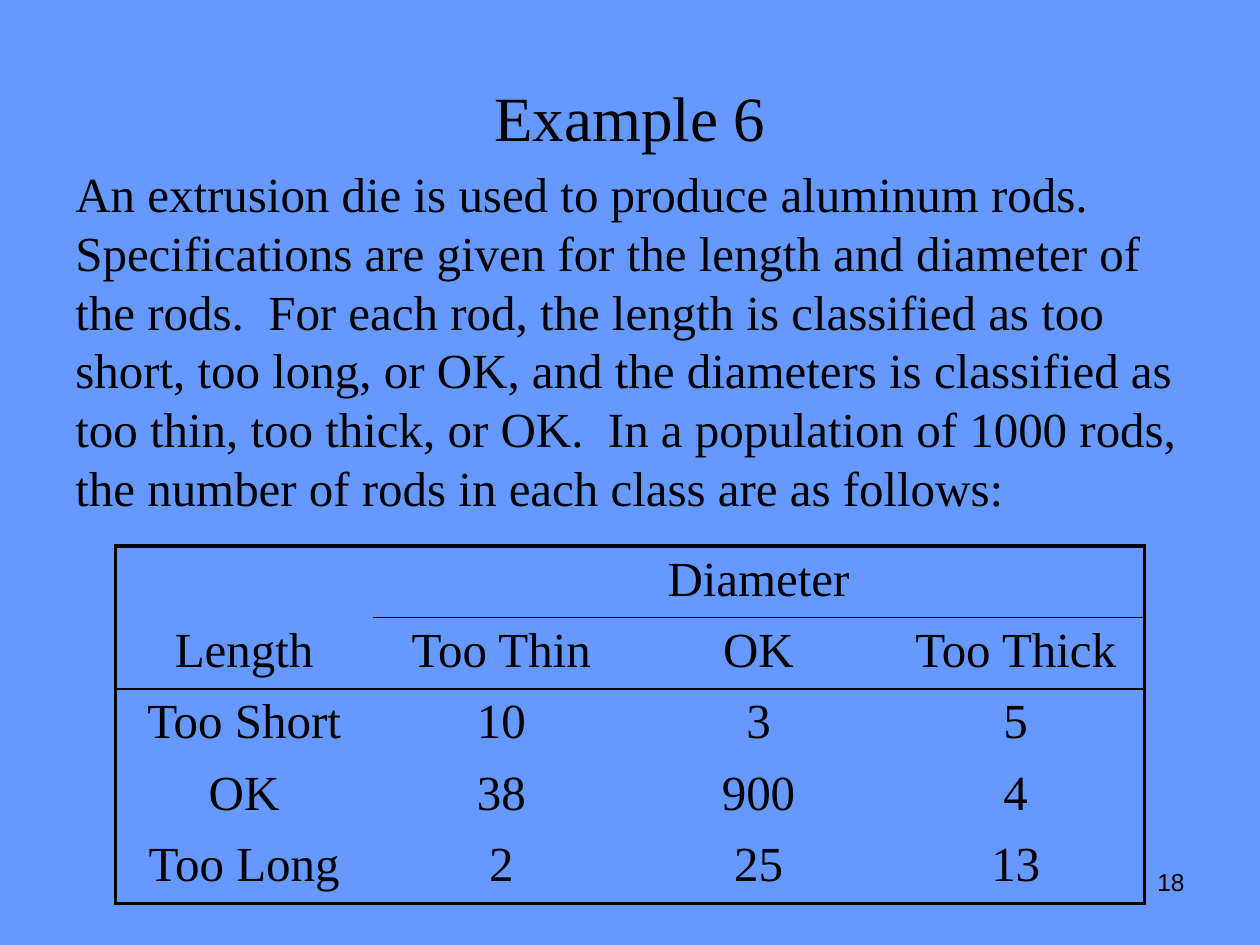
from dataclasses import dataclass

from lxml import etree
from pptx import Presentation
from pptx.dml.color import RGBColor
from pptx.enum.text import MSO_ANCHOR, PP_ALIGN
from pptx.oxml.ns import qn
from pptx.util import Pt

LEFT, CENTER, RIGHT = PP_ALIGN.LEFT, PP_ALIGN.CENTER, PP_ALIGN.RIGHT
TOP, MIDDLE = MSO_ANCHOR.TOP, MSO_ANCHOR.MIDDLE


@dataclass(frozen=True)
class Theme:
    background: str = "6699FF"
    ink: str = "000000"
    serif: str = "Times New Roman"
    sans: str = "Arial"
    title_size: float = 36
    body_size: float = 28
    number_size: float = 14
    frame_line: float = 2.25
    rule_line: float = 1


THEME = Theme()
PROBLEM = (
    "An extrusion die is used to produce aluminum rods.  Specifications are given "
    "for the length and diameter of the rods.  For each rod, the length is classified "
    "as too short, too long, or OK, and the diameters is classified as too thin, "
    "too thick, or OK.  In a population of 1000 rods, the number of rods in each "
    "class are as follows:"
)
ROD_COUNTS = [
    ["", "", "Diameter", ""],
    ["Length", "Too Thin", "OK", "Too Thick"],
    ["Too Short", "10", "3", "5"],
    ["OK", "38", "900", "4"],
    ["Too Long", "2", "25", "13"],
]
COLUMN_WIDTH, ROW_HEIGHT = 147, 38.2


def apply_format(target, values):
    for name, value in values.items():
        setattr(target, name, value)


def write_text(frame, text, size, font=THEME.serif, align=CENTER, line_spacing=None):
    para = frame.paragraphs[0]
    apply_format(para, {"alignment": align, "line_spacing": line_spacing})
    span = para.add_run()
    span.text = text
    apply_format(span.font, {"name": font, "size": Pt(size)})
    span.font.color.rgb = RGBColor.from_string(THEME.ink)


def add_text(page, bounds, text, size, anchor=TOP, **style):
    box = page.shapes.add_textbox(*map(Pt, bounds))
    apply_format(box.text_frame, {"word_wrap": True, "vertical_anchor": anchor})
    write_text(box.text_frame, text, size, **style)


def border_widths(row, column):
    """Frame around the table, a rule under Diameter and one under the header."""
    last_row, last_column = len(ROD_COUNTS) - 1, len(ROD_COUNTS[0]) - 1

    def rule_below(upper_row):
        if upper_row == 1 or (upper_row == 0 and column > 0):
            return THEME.rule_line
        return 0

    return {
        "a:lnL": THEME.frame_line if column == 0 else 0,
        "a:lnR": THEME.frame_line if column == last_column else 0,
        "a:lnT": THEME.frame_line if row == 0 else rule_below(row - 1),
        "a:lnB": THEME.frame_line if row == last_row else rule_below(row),
    }


def set_borders(cell, widths):
    properties = cell._tc.get_or_add_tcPr()
    for index, (tag, width) in enumerate(widths.items()):
        line = etree.Element(qn(tag), w=str(int(Pt(width))))
        if width:
            fill = etree.SubElement(line, qn("a:solidFill"))
            etree.SubElement(fill, qn("a:srgbClr"), val=THEME.ink)
        else:
            etree.SubElement(line, qn("a:noFill"))
        properties.insert(index, line)


def add_count_table(page, left, top):
    rows, columns = len(ROD_COUNTS), len(ROD_COUNTS[0])
    size = (columns * COLUMN_WIDTH, rows * ROW_HEIGHT)
    table = page.shapes.add_table(rows, columns, *map(Pt, (left, top, *size))).table
    apply_format(table, {"first_row": False, "horz_banding": False})
    for row, labels in enumerate(ROD_COUNTS):
        for column, label in enumerate(labels):
            cell = table.cell(row, column)
            cell.fill.background()
            set_borders(cell, border_widths(row, column))
            if label:
                write_text(cell.text_frame, label, THEME.body_size)


def main():
    deck = Presentation()
    apply_format(deck, {"slide_width": Pt(720), "slide_height": Pt(540)})
    page = deck.slides.add_slide(deck.slide_layouts[6])
    page.background.fill.solid()
    page.background.fill.fore_color.rgb = RGBColor.from_string(THEME.background)

    add_text(page, (516, 492, 168, 37.5), "18", THEME.number_size,
             font=THEME.sans, align=RIGHT)
    add_text(page, (36, 21.6, 648, 90), "Example 6", THEME.title_size,
             anchor=MIDDLE, line_spacing=Pt(43.2))
    add_text(page, (36, 90, 654, 210), PROBLEM, THEME.body_size,
             align=LEFT, line_spacing=Pt(33.6))
    add_count_table(page, 66, 312)
    deck.save("out.pptx")


if __name__ == "__main__":
    main()
